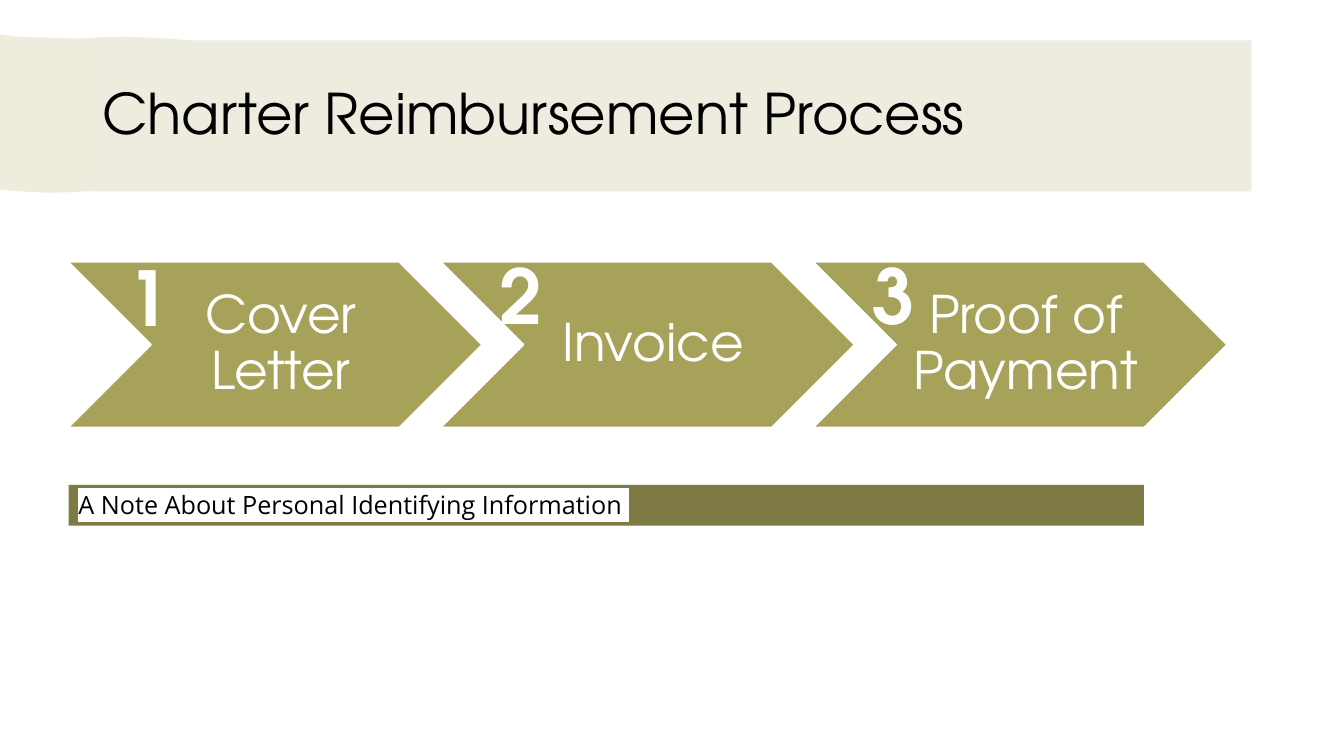
from lxml import etree
from pptx import Presentation
from pptx.dml.color import RGBColor
from pptx.enum import shapes, text
from pptx.oxml import ns
from pptx.util import Pt

TITLE = "Charter Reimbursement Process"
NOTE = "A Note About Personal Identifying Information "
# label, number, top of the number
STEPS = [("Cover Letter", "1", 175.7), ("Invoice", "2", 174.2), ("Proof of Payment", "3", 174.2)]
BRUSH_EDGE = [
    (0, 24.5), (4, 25.2), (11, 26.2), (18, 26.6), (33, 26.8), (48, 27.4), (60, 27.4),
    (73, 26.6), (90, 26.4), (109, 27), (125, 28), (140, 29.5), (160, 30), (179, 29.5),
    (202, 34), (182, 41), (190, 60), (209, 61), (190, 63), (237.6, 67.7), (221, 80),
    (202, 90), (222, 92), (194, 99), (181, 107), (142, 124), (110, 130), (73, 135.4),
    (60, 136.8), (47, 137.5), (32, 137.6), (17, 136.8), (5, 136.1), (0, 135.4),
]

DISPLAY, BODY = "TeX Gyre Adventor", "Open Sans"
OLIVE = RGBColor(0xA7, 0xA2, 0x59)
DARK_OLIVE = RGBColor(0x7D, 0x7A, 0x43)
CREAM = RGBColor(0xED, 0xEC, 0xDE)
WHITE = RGBColor(0xFF, 0xFF, 0xFF)
NUMBER_WHITE = RGBColor(0xFE, 0xFE, 0xFE)
BLACK = RGBColor(0, 0, 0)

LEFT, STEP_TOP, STEP_PITCH = 49, 187.2, 266.1
STEP_WIDTH, STEP_HEIGHT = 295.2, 118.1
LABEL_OFFSET, LABEL_WIDTH = STEP_HEIGHT / 2, 177.1
NUMBER_OFFSET, NUMBER_WIDTH, NUMBER_HEIGHT = 34.4, 45.4, 72.7


def add_color(parent, tag, color):
    """Append the element tag, holding an RGB colour, to parent."""
    holder = etree.SubElement(parent, ns.qn(tag))
    etree.SubElement(holder, ns.qn("a:srgbClr"), val=str(color))
    return holder


def style_shape(shape, fill, line=None):
    shape.shadow.inherit = False
    shape.fill.solid()
    shape.fill.fore_color.rgb = fill
    if line is None:
        shape.line.fill.background()
    else:
        shape.line.color.rgb = line
        shape.line.width = Pt(1)


def add_block(slide, kind, left, top, width, height, fill, line=None):
    shape = slide.shapes.add_shape(kind, Pt(left), Pt(top), Pt(width), Pt(height))
    style_shape(shape, fill, line)
    return shape


def add_text_box(slide, left, top, width, height):
    return slide.shapes.add_textbox(Pt(left), Pt(top), Pt(width), Pt(height))


def write(shape, words, font_name, size, color, align, spacing=None, bold=False, wrap=True):
    """Put one styled paragraph in the shape and return its run."""
    frame = shape.text_frame
    frame.word_wrap = wrap
    paragraph = frame.paragraphs[0]
    paragraph.alignment = align
    if spacing:
        paragraph.line_spacing = spacing
    font = paragraph.font
    font.name, font.size, font.bold = font_name, Pt(size), bold
    font.color.rgb = color
    run = paragraph.add_run()
    run.text = words
    return run


def add_brush(slide):
    points = [(Pt(x), Pt(y)) for x, y in BRUSH_EDGE]
    builder = slide.shapes.build_freeform(*points[0])
    builder.add_line_segments(points[1:], close=True)
    brush = builder.convert_to_shape()
    style_shape(brush, OLIVE)
    color = brush._element.spPr.find(ns.qn("a:solidFill"))[0]
    etree.SubElement(color, ns.qn("a:alpha"), val="20000")


def add_title(slide):
    band = add_block(slide, shapes.MSO_SHAPE.RECTANGLE, 66, 28.8, 828, 108, CREAM)
    band.text_frame.vertical_anchor = text.MSO_ANCHOR.MIDDLE
    write(band, TITLE, DISPLAY, 40, BLACK, text.PP_ALIGN.LEFT, spacing=0.9)


def add_step(slide, left, label):
    add_block(slide, shapes.MSO_SHAPE.CHEVRON, left, STEP_TOP, STEP_WIDTH, STEP_HEIGHT, OLIVE, WHITE)
    box = add_text_box(slide, left + LABEL_OFFSET, STEP_TOP, LABEL_WIDTH, STEP_HEIGHT)
    frame = box.text_frame
    frame.vertical_anchor = text.MSO_ANCHOR.MIDDLE
    frame.margin_left, frame.margin_right = Pt(11.5), Pt(3.6)
    write(box, label, DISPLAY, 37, WHITE, text.PP_ALIGN.CENTER, spacing=0.9)


def add_number(slide, left, top, number):
    box = add_text_box(slide, left + NUMBER_OFFSET, top, NUMBER_WIDTH, NUMBER_HEIGHT)
    box.text_frame.auto_size = text.MSO_AUTO_SIZE.SHAPE_TO_FIT_TEXT
    run = write(box, number, DISPLAY, 54, NUMBER_WHITE, text.PP_ALIGN.CENTER, bold=True, wrap=False)
    properties = run._r.get_or_add_rPr()
    properties.set("spc", "50")
    outline = etree.SubElement(properties, ns.qn("a:ln"), w=str(Pt(0.75)))
    add_color(outline, "a:solidFill", OLIVE)


def add_note(slide):
    bar = add_block(slide, shapes.MSO_SHAPE.RECTANGLE, LEFT, 346.3, 768.2, 29.1, DARK_OLIVE)
    bar.text_frame.auto_size = text.MSO_AUTO_SIZE.SHAPE_TO_FIT_TEXT
    bar.text_frame.vertical_anchor = text.MSO_ANCHOR.TOP
    run = write(bar, NOTE, BODY, 18, BLACK, text.PP_ALIGN.LEFT)
    add_color(run._r.get_or_add_rPr(), "a:highlight", WHITE)


def main():
    presentation = Presentation()
    presentation.slide_width, presentation.slide_height = Pt(960), Pt(540)
    slide = presentation.slides.add_slide(presentation.slide_layouts[6])
    add_brush(slide)
    add_title(slide)
    lefts = [LEFT + index * STEP_PITCH for index in range(len(STEPS))]
    for left, (label, _, _) in zip(lefts, STEPS):
        add_step(slide, left, label)
    for left, (_, number, top) in zip(lefts, STEPS):
        add_number(slide, left, top, number)
    add_note(slide)
    presentation.save("out.pptx")


if __name__ == "__main__":
    main()
